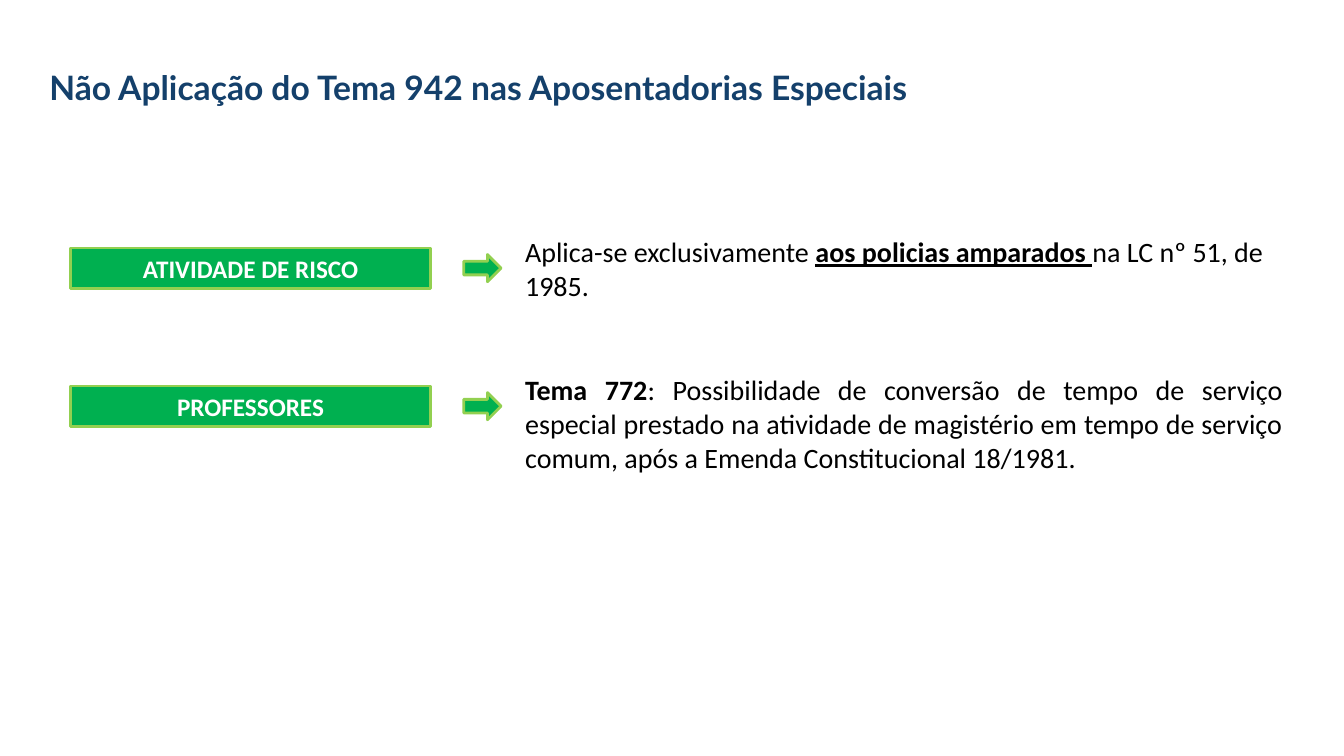
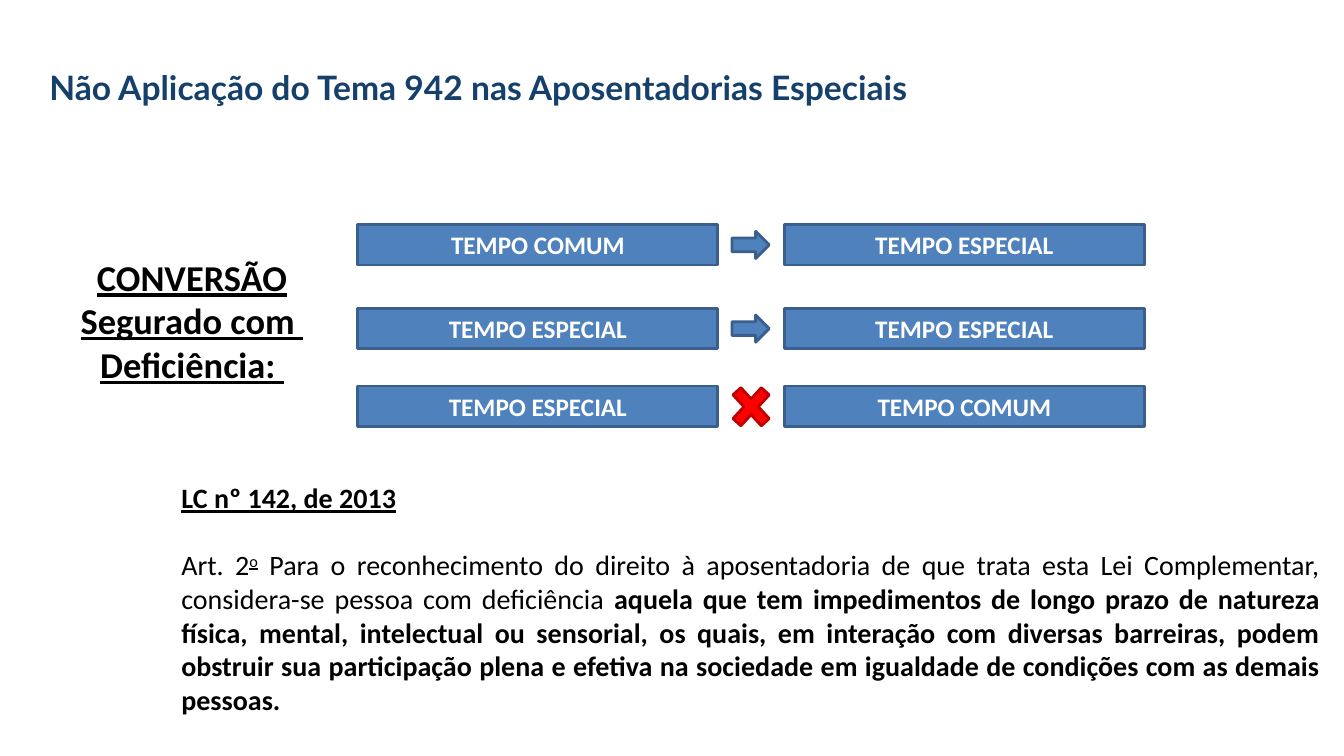
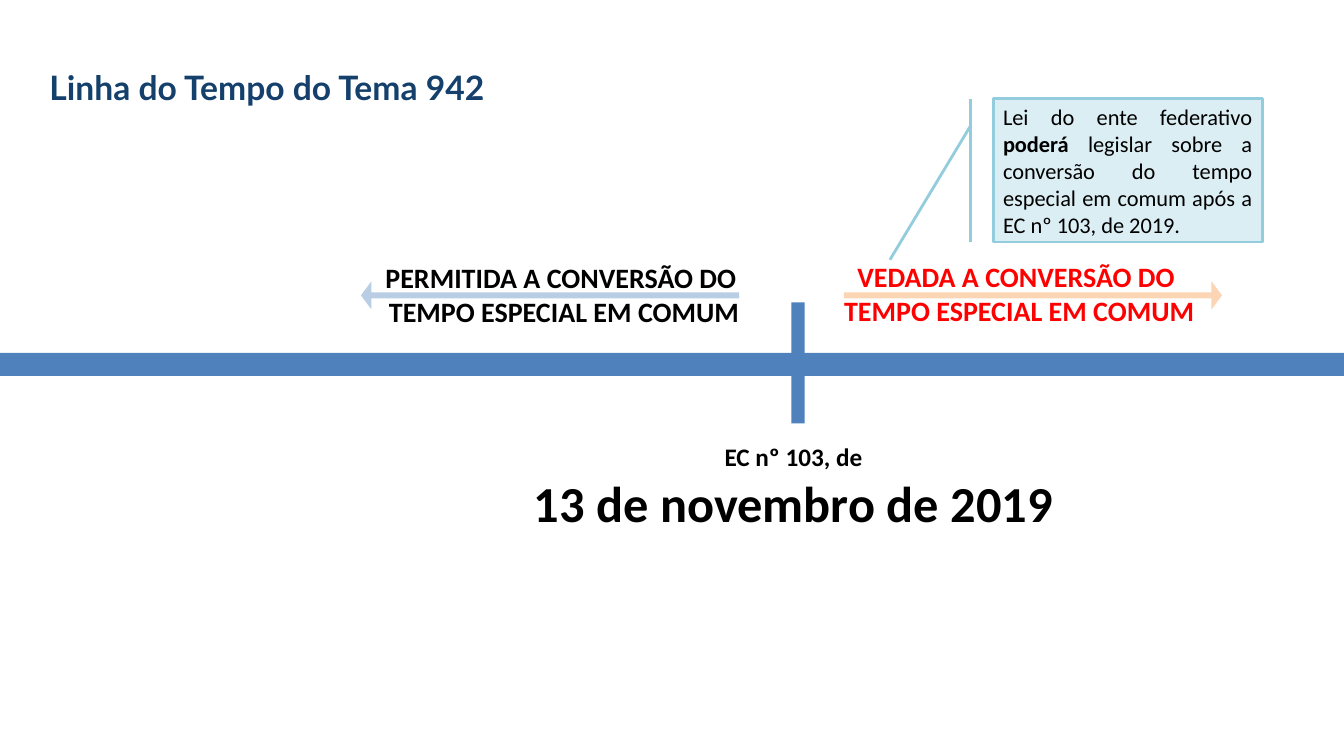
from pptx import Presentation
from pptx.dml.color import RGBColor
from pptx.enum.shapes import MSO_SHAPE as Shape
from pptx.enum.text import MSO_ANCHOR as Anchor, MSO_AUTO_SIZE as AutoSize, PP_ALIGN as Align
from pptx.util import Inches, Pt

NAVY = RGBColor(0x14, 0x40, 0x6B)
BLACK = RGBColor(0, 0, 0)
WHITE = RGBColor(0xFF, 0xFF, 0xFF)
GREEN = RGBColor(0x00, 0xB0, 0x50)
LIME = RGBColor(0x92, 0xD0, 0x50)
BLUE = RGBColor(0x4F, 0x81, 0xBD)
DARK_BLUE = RGBColor(0x3A, 0x5F, 0x8C)
RED = RGBColor(0xFF, 0, 0)
DARK_RED = RGBColor(0xC0, 0, 0)
PALE_BLUE = RGBColor(0xB9, 0xCD, 0xE5)
PEACH = RGBColor(0xFC, 0xD5, 0xB5)
ICE = RGBColor(0xDB, 0xEE, 0xF4)
AQUA = RGBColor(0x93, 0xCD, 0xDD)

SLIDE_WIDTH, SLIDE_HEIGHT = 13.33, 7.5
LABEL_WIDTH, LABEL_HEIGHT = 3.57, 0.4
ARROW_WIDTH, ARROW_HEIGHT = 0.37, 0.27
TITLE_ONLY = 5
SPECIAL_RETIREMENT = "Não Aplicação do Tema 942 nas Aposentadorias Especiais"


def style_font(font, size, color, name="Calibri"):
    font.name, font.size = name, Pt(size)
    font.color.rgb = color


def add_page(deck, title):
    page = deck.slides.add_slide(deck.slide_layouts[TITLE_ONLY])
    holder = page.shapes.title
    holder.left, holder.top = Inches(0), Inches(0.61)
    holder.width, holder.height = Inches(10.49), Inches(0.5)
    frame = holder.text_frame
    frame.text = title
    frame.auto_size = AutoSize.NONE
    frame.vertical_anchor = Anchor.TOP
    frame.margin_left = Inches(0.49)
    para = frame.paragraphs[0]
    para.alignment = Align.LEFT
    font = para.runs[0].font
    style_font(font, 24, NAVY, "Lato")
    font.bold = True
    return page


def write(frame, paragraphs, size, color=BLACK, align=Align.LEFT):
    """Fill a frame; a paragraph is a list of (text, marks): b bold, u underline, s superscript."""
    for index, spans in enumerate(paragraphs):
        para = frame.add_paragraph() if index else frame.paragraphs[0]
        para.alignment = align
        for text, marks in spans:
            span = para.add_run()
            span.text = text
            style_font(span.font, size, color)
            span.font.bold = "b" in marks
            span.font.underline = "u" in marks
            if "s" in marks:
                span.font._element.set("baseline", "30000")


def add_text(page, left, top, width, height, paragraphs, size, color=BLACK,
             align=Align.LEFT, wrap=True):
    box = page.shapes.add_textbox(Inches(left), Inches(top), Inches(width), Inches(height))
    box.text_frame.word_wrap = wrap
    write(box.text_frame, paragraphs, size, color, align)
    return box


def add_figure(page, kind, left, top, width, height, fill, line=None, adjustments=()):
    figure = page.shapes.add_shape(kind, Inches(left), Inches(top), Inches(width), Inches(height))
    figure.shadow.inherit = False
    figure.fill.solid()
    figure.fill.fore_color.rgb = fill
    if line is None:
        figure.line.fill.background()
    else:
        figure.line.color.rgb = line
        figure.line.width = Pt(2)
    for index, value in enumerate(adjustments):
        figure.adjustments[index] = value
    return figure


def add_label(page, left, top, text, fill, line):
    label = add_figure(page, Shape.RECTANGLE, left, top, LABEL_WIDTH, LABEL_HEIGHT, fill, line)
    label.text_frame.vertical_anchor = Anchor.MIDDLE
    write(label.text_frame, [[(text, "b")]], 18, WHITE, Align.CENTER)


def add_row_arrow(page, left, row_top, fill, line):
    """Small arrow centred on the height of a row of labels."""
    top = row_top + (LABEL_HEIGHT - ARROW_HEIGHT) / 2
    add_figure(page, Shape.RIGHT_ARROW, left, top, ARROW_WIDTH, ARROW_HEIGHT, fill, line)


def build_exclusions(deck):
    page = add_page(deck, SPECIAL_RETIREMENT)
    rows = [
        (2.46, "ATIVIDADE DE RISCO", 0.77, Align.LEFT,
         [("Aplica-se exclusivamente ", ""), ("aos policias amparados ", "bu"),
          ("na LC nº 51, de 1985.", "")]),
        (3.83, "PROFESSORES", 1.11, Align.JUSTIFY,
         [("Tema 772", "b"),
          (": Possibilidade de conversão de tempo de serviço especial prestado na atividade "
           "de magistério em tempo de serviço comum, após a Emenda Constitucional 18/1981.", "")]),
    ]
    for top, label, height, align, spans in rows:
        add_label(page, 0.7, top, label, GREEN, LIME)
        add_row_arrow(page, 4.6, top, GREEN, LIME)
        add_text(page, 5.11, top - 0.18, 7.71, height, [spans], 20, align=align)


def build_disability(deck):
    page = add_page(deck, SPECIAL_RETIREMENT)
    common, special = "TEMPO COMUM", "TEMPO ESPECIAL"
    rows = [(2.23, common, special, True), (3.06, special, special, True),
            (3.83, special, common, False)]
    for top, source, target, allowed in rows:
        add_label(page, 3.55, top, source, BLUE, DARK_BLUE)
        add_label(page, 7.78, top, target, BLUE, DARK_BLUE)
        if allowed:
            add_row_arrow(page, 7.26, top, BLUE, DARK_BLUE)
        else:
            add_figure(page, Shape.MATH_MULTIPLY, 7.18, top - 0.09, 0.54, 0.59,
                       RED, DARK_RED, [0.195])

    heading = ["CONVERSÃO", "Segurado com ", "Deficiência: "]
    add_text(page, 0.69, 2.48, 2.43, 1.41, [[(text, "bu")] for text in heading], 26,
             align=Align.CENTER, wrap=False)
    law = add_text(page, 1.7, 4.72, 11.49, 2.46, [
        [("LC nº 142, de 2013", "bu")],
        [("Art. 2", ""), ("o", "us"),
         (" Para o reconhecimento do direito à aposentadoria de que trata esta Lei "
          "Complementar, considera-se pessoa com deficiência ", ""),
         ("aquela que tem impedimentos de longo prazo de natureza física, mental, intelectual "
          "ou sensorial, os quais, em interação com diversas barreiras, podem obstruir sua "
          "participação plena e efetiva na sociedade em igualdade de condições com as demais "
          "pessoas.", "b")],
    ], 20, align=Align.JUSTIFY)
    law.text_frame.paragraphs[1].space_before = Pt(24)


def build_timeline(deck):
    page = add_page(deck, "Linha do Tempo do Tema 942")
    add_figure(page, Shape.RECTANGLE, 0, 3.5, SLIDE_WIDTH, 0.23, BLUE)
    add_figure(page, Shape.RECTANGLE, 7.85, 3, 0.13, 1.2, BLUE)

    date = add_text(page, 5.17, 4.33, 5.4, 1.01,
                    [[("EC nº 103, de", "b")], [("13 de novembro de 2019", "b")]], 18,
                    align=Align.CENTER, wrap=False)
    date.text_frame.paragraphs[1].runs[0].font.size = Pt(36)

    periods = [
        ("PERMITIDA", 3.71, 2.54, 3.77, BLACK, Shape.LEFT_ARROW, 3.58, PALE_BLUE),
        ("VEDADA", 8.26, 2.53, 3.7, RED, Shape.RIGHT_ARROW, 8.37, PEACH),
    ]
    for status, left, top, width, color, kind, arrow_left, fill in periods:
        add_text(page, left, top, width, 0.77,
                 [[(f"{status} A CONVERSÃO DO ", "b")], [("TEMPO ESPECIAL EM COMUM", "b")]],
                 20, color, Align.CENTER, wrap=False)
        add_figure(page, kind, arrow_left, 2.79, 3.75, 0.28, fill, adjustments=[0.216, 0.372])

    note = add_figure(page, Shape.LINE_CALLOUT_1_BORDER_AND_ACCENT_BAR,
                      9.85, 0.98, 2.67, 1.42, ICE, AQUA)
    note.text_frame.vertical_anchor = Anchor.MIDDLE
    write(note.text_frame, [[
        ("Lei do ente federativo ", ""), ("poderá", "b"),
        (" legislar sobre a conversão do tempo especial em comum após a EC nº 103, de 2019.", ""),
    ]], 16, align=Align.JUSTIFY)


def main():
    deck = Presentation()
    deck.slide_width, deck.slide_height = Inches(SLIDE_WIDTH), Inches(SLIDE_HEIGHT)
    build_exclusions(deck)
    build_disability(deck)
    build_timeline(deck)
    deck.save("out.pptx")


if __name__ == "__main__":
    main()
